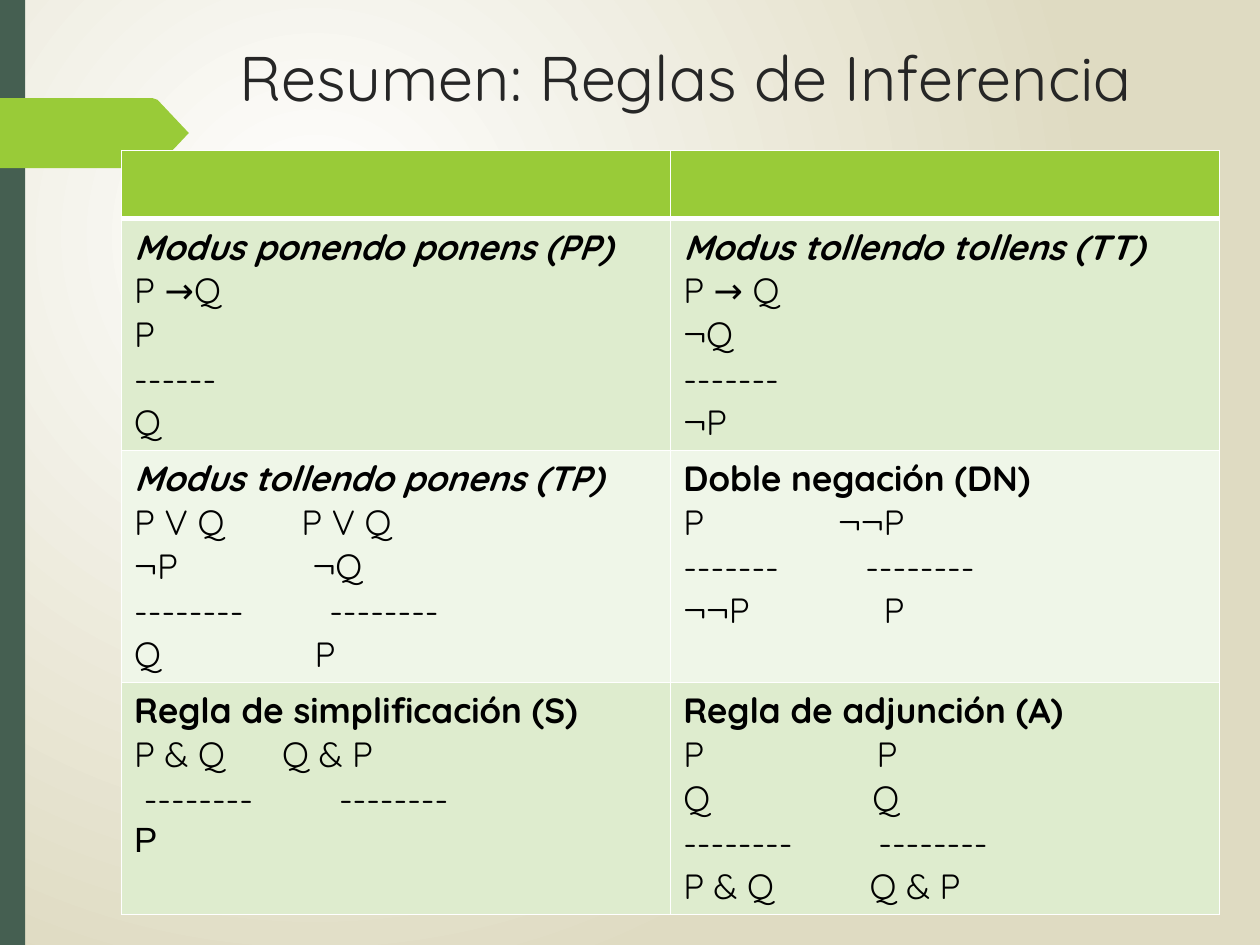
from dataclasses import dataclass

from lxml import etree
from pptx import Presentation
from pptx.dml.color import RGBColor
from pptx.enum.shapes import MSO_SHAPE
from pptx.oxml.ns import qn
from pptx.util import Pt

RECT = MSO_SHAPE.RECTANGLE
FONT = "Quicksand"
GREEN, DARK, WHITE, BLACK = "99CB38", "455F51", "FFFFFF", "000000"
BANDS = ("DEECCE", "EFF6E8")
ARROW = [(0, 56), (87, 56), (89.5, 57), (107, 75), (107.5, 76),
         (107, 77), (89.5, 95), (87, 96), (0, 96)]


@dataclass
class Line:
    left: str
    right: str = ""
    stop: float = 0
    font: str = FONT


@dataclass
class Rule:
    name: str
    lines: list[Line]
    slant: bool = False


RULES = [
    Rule("Modus ponendo ponens (PP)",
         [Line("P →Q"), Line("P"), Line("------"), Line("Q")], True),
    Rule("Modus tollendo tollens (TT)",
         [Line("P → Q"), Line("¬Q"), Line("-------"), Line("¬P")], True),
    Rule("Modus tollendo ponens (TP)",
         [Line("P V Q", "P V Q", 95.5), Line("¬P", "¬Q", 102),
          Line("--------", "--------", 111.5), Line("Q", "P", 103)], True),
    Rule("Doble negación (DN)",
         [Line("P", "¬¬P", 88.5), Line("-------", "--------", 104),
          Line("¬¬P", "P", 114.5)]),
    Rule("Regla de simplificación (S)",
         [Line("P & Q", "Q & P", 84.5), Line(" --------", "--------", 117),
          Line("P", font="Arial")]),
    Rule("Regla de adjunción (A)",
         [Line("P", "P", 110.5), Line("Q", "Q", 108),
          Line("--------", "--------", 111.5), Line("P & Q", "Q & P", 106.5)]),
]


def paint(fill, color: str) -> None:
    """Fill with one solid colour."""
    fill.solid()
    fill.fore_color.rgb = RGBColor.from_string(color)


def plain(shape, color: str) -> None:
    """Give a shape a flat fill with no line or shadow."""
    paint(shape.fill, color)
    shape.line.fill.background()
    shape.shadow.inherit = False


def style(para, size: float, color: str, face: str = FONT,
          bold: bool = False, slant: bool = False) -> None:
    """Format every run of a paragraph."""
    for run in para.runs:
        font = run.font
        font.name, font.size, font.bold, font.italic = face, Pt(size), bold, slant
        font.color.rgb = RGBColor.from_string(color)


def glow(slide) -> None:
    """Set the round gradient of the background."""
    fill = slide.background.fill
    fill.gradient()
    for stop, color in zip(fill.gradient_stops, (WHITE, "DFDBC2")):
        stop.color.rgb = RGBColor.from_string(color)
    for stop, place in zip(fill.gradient_stops, (0, 1)):
        stop.position = place
    grad = slide.background._cSld.find(".//" + qn("a:gradFill"))
    grad.remove(grad.find(qn("a:lin")))
    ring = etree.SubElement(grad, qn("a:path"), path="circle")
    etree.SubElement(ring, qn("a:fillToRect"),
                     l="50000", t="50000", r="100000", b="100000")


def edge(cell, base: float = 1) -> None:
    """Draw white borders round a cell."""
    props = cell._tc.get_or_add_tcPr()
    sides = {"a:lnL": 1, "a:lnR": 1, "a:lnT": 1, "a:lnB": base}
    for spot, (tag, width) in enumerate(sides.items()):
        line = etree.Element(qn(tag), w=str(Pt(width)))
        solid = etree.SubElement(line, qn("a:solidFill"))
        etree.SubElement(solid, qn("a:srgbClr"), val=WHITE)
        props.insert(spot, line)


def write(cell, rule: Rule) -> None:
    """Write a rule as a bold name and its tabbed lines."""
    frame = cell.text_frame
    frame.text = rule.name
    style(frame.paragraphs[0], 20, BLACK, bold=True, slant=rule.slant)
    for line in rule.lines:
        para = frame.add_paragraph()
        para.text = line.left
        if line.right:
            para.text += "\t" + line.right
            tabs = etree.SubElement(para._p.get_or_add_pPr(), qn("a:tabLst"))
            etree.SubElement(tabs, qn("a:tab"), pos=str(Pt(line.stop)), algn="l")
        style(para, 20, BLACK, line.font)


def grid(slide) -> None:
    """Build the table of rules."""
    table = slide.shapes.add_table(
        4, 2, Pt(69.5), Pt(86), Pt(627.5), Pt(436.5)).table
    table.first_row = table.horz_banding = False
    for row in table.rows:
        row.height = Pt(132.5)
    table.rows[0].height = Pt(39)
    for cell in table.rows[0].cells:
        paint(cell.fill, GREEN)
        edge(cell, 3)
    for spot, rule in enumerate(RULES):
        row, col = divmod(spot, 2)
        cell = table.cell(row + 1, col)
        paint(cell.fill, BANDS[row % 2])
        edge(cell)
        write(cell, rule)


def main() -> None:
    """Build and save the slide."""
    deck = Presentation()
    deck.slide_width, deck.slide_height = Pt(720), Pt(540)
    slide = deck.slides.add_slide(deck.slide_layouts[6])
    glow(slide)
    plain(slide.shapes.add_shape(RECT, 0, 0, Pt(14.4), Pt(540)), DARK)
    path = slide.shapes.build_freeform(*ARROW[0], scale=Pt(1))
    path.add_line_segments(ARROW[1:])
    plain(path.convert_to_shape(), GREEN)
    frame = slide.shapes.add_textbox(
        Pt(129.6), Pt(18.7), Pt(570), Pt(60.5)).text_frame
    frame.word_wrap = True
    frame.text = "Resumen: Reglas de Inferencia"
    style(frame.paragraphs[0], 36, "262626")
    grid(slide)
    deck.save("out.pptx")


if __name__ == "__main__":
    main()
